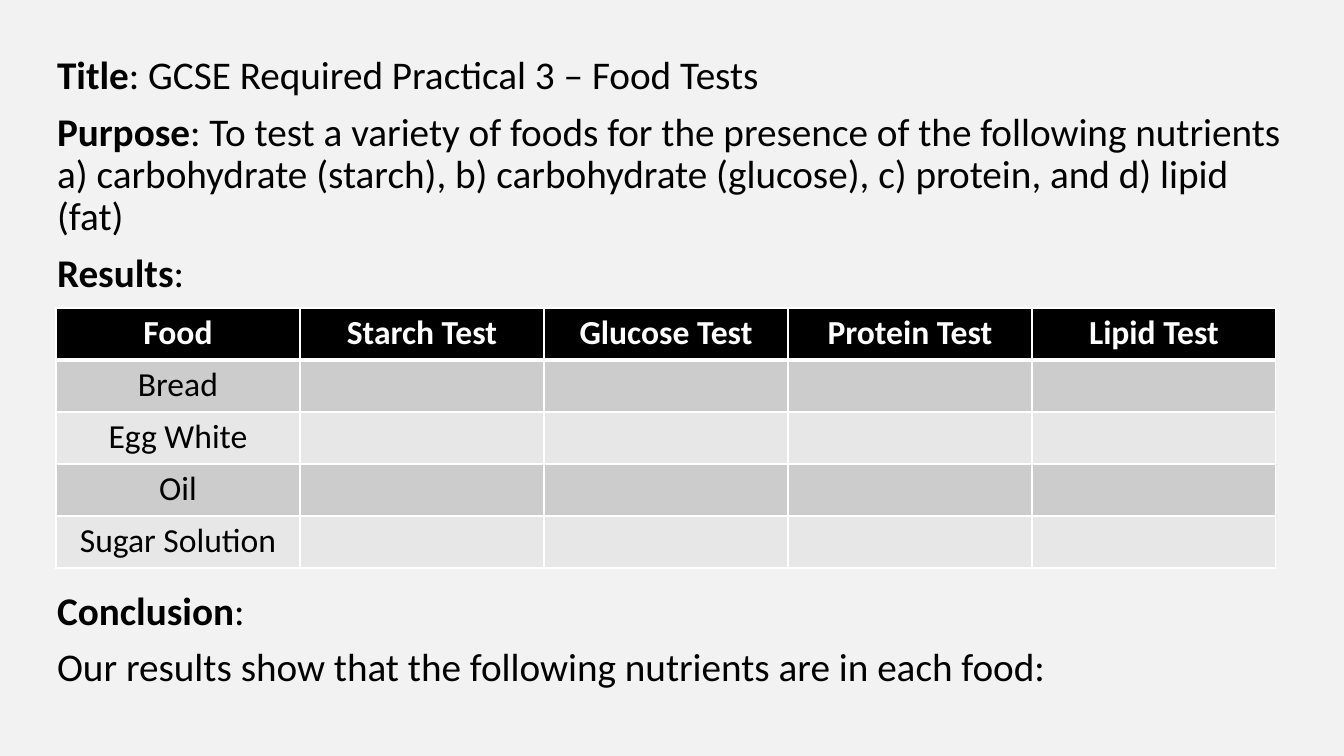
from lxml.etree import SubElement
from pptx import Presentation
from pptx.dml.color import RGBColor
from pptx.enum.text import MSO_ANCHOR, MSO_AUTO_SIZE, PP_ALIGN
from pptx.oxml import parse_xml
from pptx.oxml.ns import nsdecls, qn
from pptx.util import Pt

SLIDE = (1344, 756)
REPORT_BOX = (47, 51, 1254, 665)
TABLE_CORNER = (56, 308)
COLUMN_WIDTH, ROW_HEIGHT = 244, 52

REPORT = [
    ("Title", ": GCSE Required Practical 3 – Food Tests", 10),
    ("Purpose", ": To test a variety of foods for the presence of the following nutrients "
     "a) carbohydrate (starch), b) carbohydrate (glucose), c) protein, and d) lipid (fat)", 10),
    ("Results", ":", 10),
    ("Conclusion", ":", 211),
    ("", "Our results show that the following nutrients are in each food:", 10),
]
TESTS = ["Food", "Starch Test", "Glucose Test", "Protein Test", "Lipid Test"]
FOODS = ["Bread", "Egg White", "Oil", "Sugar Solution"]

BACKGROUND, BLACK, WHITE = "F2F2F2", "000000", "FFFFFF"
BANDS = ["CCCCCC", "E7E7E7"]
REPORT_FONT = {"name": "Calibri", "size": Pt(28)}
TABLE_FONT = {"name": "Calibri", "size": Pt(24)}
FRAME_FORMAT = {"word_wrap": True, "auto_size": MSO_AUTO_SIZE.NONE,
                "vertical_anchor": MSO_ANCHOR.TOP}


def emu(px):
    """Turn slide pixels into EMU."""
    return round(px * 914400 / 100.8)


def paint(fill, color):
    """Fill with a solid hex colour."""
    fill.solid()
    fill.fore_color.rgb = RGBColor.from_string(color)


def apply(target, values):
    """Set every format value on the target."""
    for name, value in values.items():
        setattr(target, name, value)


def write(paragraph, wording, font, color, bold):
    """Add one formatted run to a paragraph."""
    run = paragraph.add_run()
    run.text = wording
    apply(run.font, {**font, "bold": bold})
    paint(run.font.fill, color)


def add_report(slide):
    """Write the report lines in the body placeholder."""
    body = slide.placeholders[1]
    apply(body, dict(zip(("left", "top", "width", "height"), map(emu, REPORT_BOX))))
    frame = body.text_frame
    apply(frame, FRAME_FORMAT)
    for index, (heading, detail, gap) in enumerate(REPORT):
        line = frame.add_paragraph() if index else frame.paragraphs[0]
        apply(line, {"line_spacing": 0.9, "space_before": Pt(gap), "space_after": Pt(0)})
        properties = line._p.get_or_add_pPr()
        properties.set("marL", "0")
        properties.set("indent", "0")
        SubElement(properties, qn("a:buNone"))
        if heading:
            write(line, heading, REPORT_FONT, BLACK, True)
        write(line, detail, REPORT_FONT, BLACK, False)


def add_borders(cell, top, bottom):
    """Draw white cell borders with the given top and bottom widths."""
    sides = {"L": 1, "R": 1, "T": top, "B": bottom}
    for index, (side, width) in enumerate(sides.items()):
        border = parse_xml(
            f'<a:ln{side} {nsdecls("a")} w="{Pt(width)}"><a:solidFill>'
            f'<a:srgbClr val="{WHITE}"/></a:solidFill></a:ln{side}>')
        cell._tc.get_or_add_tcPr().insert(index, border)


def add_results(slide):
    """Build the food test table."""
    rows = [TESTS] + [[food] + [""] * (len(TESTS) - 1) for food in FOODS]
    size = (COLUMN_WIDTH * len(TESTS), ROW_HEIGHT * len(rows))
    results = slide.shapes.add_table(
        len(rows), len(TESTS), *map(emu, TABLE_CORNER + size)).table
    for column in results.columns:
        column.width = emu(COLUMN_WIDTH)
    for r, row in enumerate(rows):
        results.rows[r].height = emu(ROW_HEIGHT)
        is_header = r == 0
        for c, wording in enumerate(row):
            cell = results.cell(r, c)
            paint(cell.fill, BLACK if is_header else BANDS[(r - 1) % 2])
            add_borders(cell, 3 if r == 1 else 1, 3 if is_header else 1)
            if wording:
                label = cell.text_frame.paragraphs[0]
                label.alignment = PP_ALIGN.CENTER
                write(label, wording, TABLE_FONT, WHITE if is_header else BLACK, is_header)


def main():
    """Build and save the slide."""
    deck = Presentation()
    deck.slide_width, deck.slide_height = map(emu, SLIDE)
    slide = deck.slides.add_slide(deck.slide_layouts[1])
    paint(slide.background.fill, BACKGROUND)
    empty_title = slide.shapes.title.element
    empty_title.getparent().remove(empty_title)
    add_report(slide)
    add_results(slide)
    deck.save("out.pptx")


if __name__ == "__main__":
    main()
